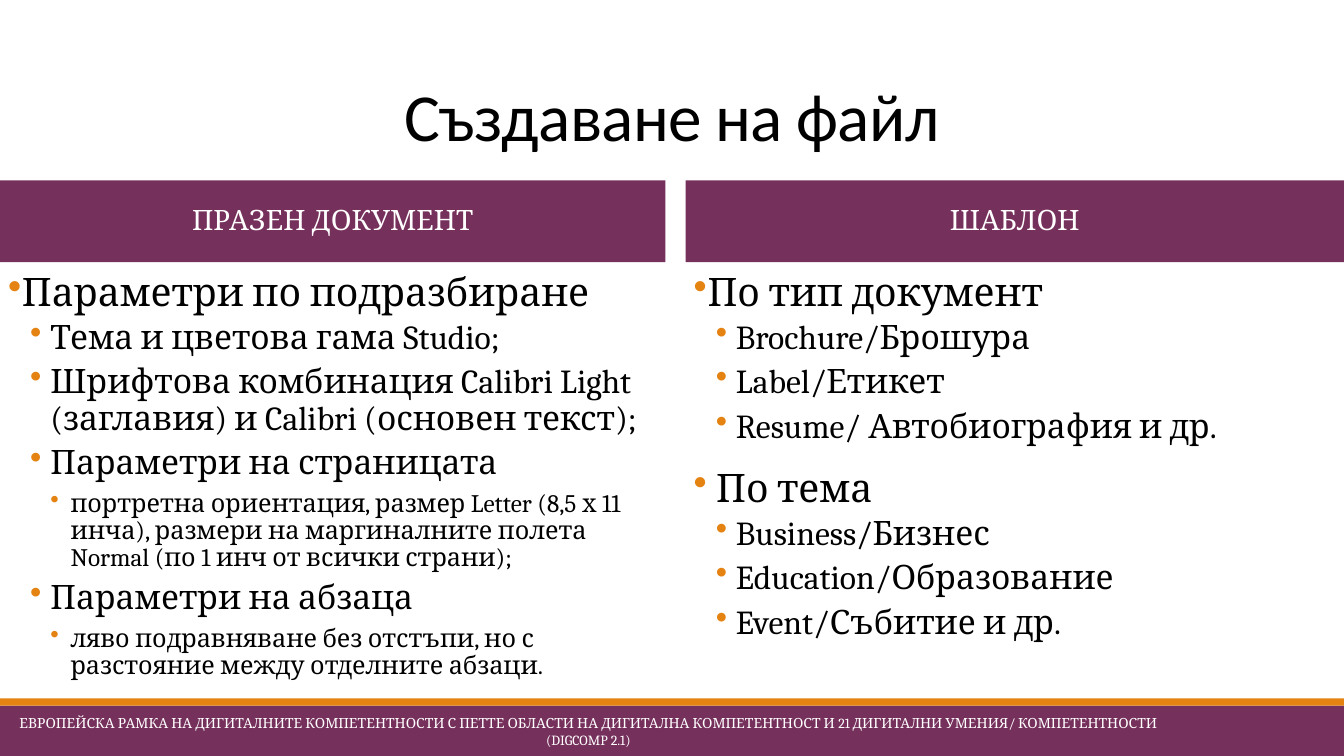
import pptx
import pptx.util
import pptx.dml.color
import pptx.enum.shapes
import pptx.enum.text
import lxml.etree

Inches, Pt = pptx.util.Inches, pptx.util.Pt
ALIGN = pptx.enum.text.PP_ALIGN
ANCHOR = pptx.enum.text.MSO_ANCHOR

TITLE = "Създаване на файл"
FOOTER = (
    "ЕВРОПЕЙСКА РАМКА НА ДИГИТАЛНИТЕ КОМПЕТЕНТНОСТИ С ПЕТТЕ ОБЛАСТИ НА "
    "ДИГИТАЛНА КОМПЕТЕНТНОСТ И 21 ДИГИТАЛНИ УМЕНИЯ/ КОМПЕТЕНТНОСТИ (DIGCOMP 2.1)"
)
COLUMNS = [
    ("ПРАЗЕН ДОКУМЕНТ", 0, 6.6, [
        (0, "Параметри по подразбиране"),
        (1, "Тема и цветова гама Studio;"),
        (1, "Шрифтова комбинация Calibri Light (заглавия) и Calibri (основен текст);"),
        (1, "Параметри на страницата"),
        (2, "портретна ориентация, размер Letter (8,5 х 11 инча), размери на "
            "маргиналните полета Normal (по 1 инч от всички страни);"),
        (1, "Параметри на абзаца"),
        (2, "ляво подравняване без отстъпи, но с разстояние между отделните абзаци."),
    ]),
    ("ШАБЛОН", 6.8, 6.53, [
        (0, "По тип документ"),
        (1, "Brochure/Брошура"),
        (1, "Label/Етикет"),
        (1, "Resume/ Автобиография и др."),
        (0, " По тема"),
        (1, "Business/Бизнес"),
        (1, "Education/Образование"),
        (1, "Event/Събитие и др."),
    ]),
]

THEME = {
    "plum": "76305C", "orange": "E48312", "black": "000000", "white": "FFFFFF",
    "head": "Calibri", "body": "Cambria",
    "title": 48, "band": 20, "foot": 10,
    "levels": [
        {"size": 28, "left": 0.1, "hang": -0.16, "before": 12, "after": 2},
        {"size": 24, "left": 0.42, "hang": -0.2, "before": 2, "after": 4},
        {"size": 18, "left": 0.62, "hang": -0.2, "before": 2, "after": 4},
    ],
}
WIDE, HIGH = 13.33, 7.5


def tint(name):
    return pptx.dml.color.RGBColor.from_string(THEME[name])


def add_bar(slide, box, color):
    bar = slide.shapes.add_shape(
        pptx.enum.shapes.MSO_SHAPE.RECTANGLE, *map(Inches, box))
    bar.shadow.inherit = False
    bar.fill.solid()
    bar.fill.fore_color.rgb = tint(color)
    bar.line.fill.background()
    return bar


def add_box(slide, box):
    return slide.shapes.add_textbox(*map(Inches, box))


def set_frame(shape, anchor, side, top):
    frame = shape.text_frame
    frame.word_wrap = True
    frame.vertical_anchor = anchor
    frame.margin_left = frame.margin_right = Inches(side)
    frame.margin_top = frame.margin_bottom = Inches(top)
    return frame


def style(para, text, size, color, face="body", align=ALIGN.CENTER, lines=0.9):
    para.text = text
    para.alignment = align
    para.line_spacing = lines
    para.font.size = Pt(size)
    para.font.name = THEME[face]
    para.font.color.rgb = tint(color)


def add_bullet(para, level):
    props = para._p.get_or_add_pPr()
    props.set("marL", str(Inches(level["left"])))
    props.set("indent", str(Inches(level["hang"])))
    space = pptx.oxml.ns.qn
    color = lxml.etree.Element(space("a:buClr"))
    lxml.etree.SubElement(color, space("a:srgbClr")).set("val", THEME["orange"])
    mark = lxml.etree.Element(space("a:buChar"))
    mark.set("char", "•")
    first = props.find(space("a:defRPr"))
    first.addprevious(color)
    first.addprevious(mark)


def add_list(frame, items):
    for index, (depth, text) in enumerate(items):
        para = frame.add_paragraph() if index else frame.paragraphs[0]
        level = THEME["levels"][depth]
        style(para, text, level["size"], "black", align=ALIGN.LEFT)
        para.level = depth
        para.space_before = Pt(level["before"])
        para.space_after = Pt(level["after"])
        add_bullet(para, level)


def main():
    deck = pptx.Presentation()
    deck.slide_width, deck.slide_height = Inches(WIDE), Inches(HIGH)
    slide = deck.slides.add_slide(deck.slide_layouts[6])

    add_bar(slide, (0, 7, WIDE, 0.5), "plum")
    add_bar(slide, (0, 6.93, WIDE, 0.07), "orange")

    frame = set_frame(add_box(slide, (0, 0, WIDE, 1.59)), ANCHOR.BOTTOM, 0.1, 0.05)
    para = frame.paragraphs[0]
    style(para, TITLE, THEME["title"], "black", "head", lines=0.85)
    para.runs[0]._r.get_or_add_rPr().set("spc", "-50")

    for name, left, width, items in COLUMNS:
        band = add_bar(slide, (left, 1.79, width, 0.81), "plum")
        frame = set_frame(band, ANCHOR.MIDDLE, 0.1, 0.08)
        style(frame.paragraphs[0], name, THEME["band"], "white")
        frame.paragraphs[0].space_before = Pt(12)
        frame.paragraphs[0].space_after = Pt(2)
        body = add_box(slide, (left, 2.62, width, 4.28))
        add_list(set_frame(body, ANCHOR.TOP, 0.08, 0.08), items)

    foot = add_box(slide, (0, 7.06, 11.67, 0.4))
    frame = set_frame(foot, ANCHOR.MIDDLE, 0.04, 0.04)
    style(frame.paragraphs[0], FOOTER, THEME["foot"], "white", lines=1.0)

    deck.save("out.pptx")


if __name__ == "__main__":
    main()
